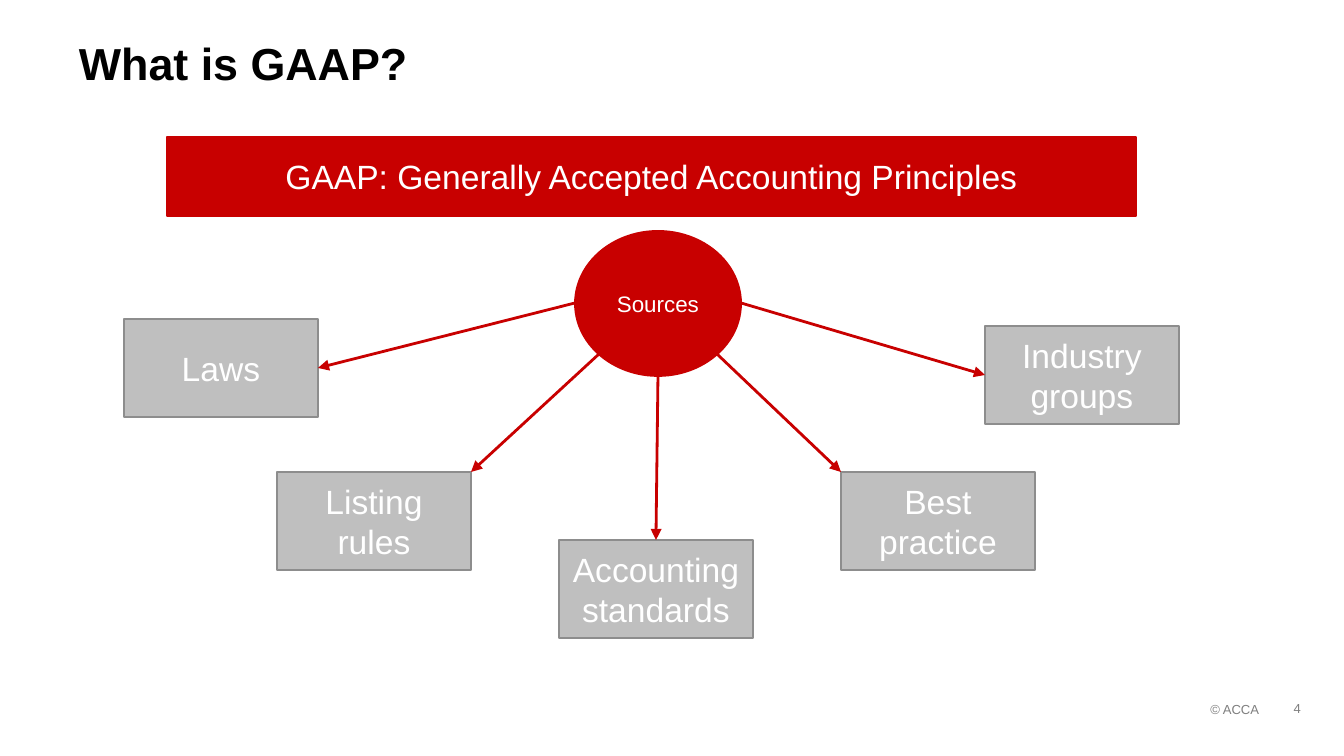
from dataclasses import dataclass
from math import sqrt

from lxml.etree import SubElement
from pptx import Presentation
from pptx.dml.color import RGBColor
from pptx.enum.shapes import MSO_CONNECTOR, MSO_SHAPE
from pptx.enum.text import MSO_ANCHOR, PP_ALIGN
from pptx.oxml.ns import qn
from pptx.shapes.autoshape import Shape
from pptx.slide import Slide
from pptx.text.text import TextFrame
from pptx.util import Pt

EMU_PER_PX = 914400 / 134.4
RED, GREY, GREY_EDGE = "C80000", "BFBFBF", "8D8D8D"
WHITE, BLACK, FOOTER_GREY = "FFFFFF", "000000", "7F7F7F"
SOURCE_WIDTH, SOURCE_HEIGHT = 194, 98
TOP, LEFT, RIGHT = 0, 1, 3


@dataclass
class Box:
    left: int
    top: int
    width: int
    height: int


@dataclass
class Source:
    text: str
    left: int
    top: int
    start: tuple[int, int]
    end: tuple[int, int]
    site: int | None = None


@dataclass
class Label:
    text: str
    box: Box
    size: int
    color: str
    align: PP_ALIGN
    bold: bool = False
    line_spacing: float = 1.0


def px(length: int) -> int:
    return round(length * EMU_PER_PX)


def rgb(color: str) -> RGBColor:
    return RGBColor.from_string(color)


def emu(box: Box) -> tuple[int, ...]:
    return px(box.left), px(box.top), px(box.width), px(box.height)


def write(frame: TextFrame, text: str, size: int, color: str, align: PP_ALIGN,
          bold: bool = False, line_spacing: float = 1.0) -> None:
    frame.word_wrap = True
    paragraph = frame.paragraphs[0]
    paragraph.text = text
    paragraph.alignment = align
    paragraph.line_spacing = line_spacing
    paragraph.font.name = "Arial"
    paragraph.font.size = Pt(size)
    paragraph.font.bold = bold
    paragraph.font.color.rgb = rgb(color)


def add_label(slide: Slide, label: Label) -> None:
    frame = slide.shapes.add_textbox(*emu(label.box)).text_frame
    frame.margin_left = frame.margin_top = 0
    frame.margin_right = frame.margin_bottom = 0
    write(frame, label.text, label.size, label.color, label.align,
          label.bold, label.line_spacing)


def add_block(slide: Slide, kind: MSO_SHAPE, box: Box, text: str, size: int,
              fill: str, edge: str) -> Shape:
    shape = slide.shapes.add_shape(kind, *emu(box))
    shape.shadow.inherit = False
    shape.fill.solid()
    shape.fill.fore_color.rgb = rgb(fill)
    shape.line.color.rgb = rgb(edge)
    shape.line.width = Pt(1)
    shape.text_frame.vertical_anchor = MSO_ANCHOR.MIDDLE
    write(shape.text_frame, text, size, WHITE, PP_ALIGN.CENTER)
    return shape


def add_arrow(slide: Slide, source: Source, target: Shape) -> None:
    points = [px(value) for value in (*source.start, *source.end)]
    arrow = slide.shapes.add_connector(MSO_CONNECTOR.STRAIGHT, *points)
    if source.site is not None:
        arrow.end_connect(target, source.site)
    arrow.line.color.rgb = rgb(RED)
    arrow.line.width = Pt(1.5)
    SubElement(arrow.line._get_or_add_ln(), qn("a:tailEnd"), type="triangle")
    SubElement(arrow._element.spPr, qn("a:effectLst"))


HUB = Box(575, 231, 166, 145)
HUB_X, HUB_Y = HUB.left + HUB.width // 2, HUB.top + HUB.height // 2
DIAGONAL_X = round(HUB.width / 2 / sqrt(2))
DIAGONAL_Y = round(HUB.height / 2 / sqrt(2))
HUB_RIGHT, HUB_BOTTOM = HUB.left + HUB.width, HUB.top + HUB.height
HALF_WIDTH, HALF_HEIGHT = SOURCE_WIDTH // 2, SOURCE_HEIGHT // 2

SOURCES = [
    Source("Laws", 124, 319, (HUB.left, HUB_Y),
           (124 + SOURCE_WIDTH, 319 + HALF_HEIGHT), RIGHT),
    Source("Accounting standards", 559, 540, (HUB_X, HUB_BOTTOM),
           (559 + HALF_WIDTH, 540), TOP),
    Source("Listing rules", 277, 472, (HUB_X - DIAGONAL_X, HUB_Y + DIAGONAL_Y),
           (277 + SOURCE_WIDTH, 472)),
    Source("Best practice", 841, 472, (HUB_X + DIAGONAL_X, HUB_Y + DIAGONAL_Y),
           (841, 472)),
    Source("Industry groups", 985, 326, (HUB_RIGHT, HUB_Y),
           (985, 326 + HALF_HEIGHT), LEFT),
]

LABELS = [
    Label("© ACCA", Box(958, 702, 301, 16), 7, FOOTER_GREY, PP_ALIGN.RIGHT),
    Label("4", Box(1270, 701, 31, 18), 7, FOOTER_GREY, PP_ALIGN.RIGHT),
    Label("What is GAAP?", Box(79, 42, 1153, 52), 24, BLACK, PP_ALIGN.LEFT,
          bold=True, line_spacing=0.9),
]


def main() -> None:
    presentation = Presentation()
    presentation.slide_width, presentation.slide_height = px(1344), px(756)
    slide = presentation.slides.add_slide(presentation.slide_layouts[6])
    for label in LABELS:
        add_label(slide, label)
    add_block(slide, MSO_SHAPE.RECTANGLE, Box(167, 137, 969, 79),
              "GAAP: Generally Accepted Accounting Principles", 18, RED, RED)
    add_block(slide, MSO_SHAPE.OVAL, HUB, "Sources", 12, RED, RED)
    targets = [
        add_block(slide, MSO_SHAPE.RECTANGLE,
                  Box(source.left, source.top, SOURCE_WIDTH, SOURCE_HEIGHT),
                  source.text, 18, GREY, GREY_EDGE)
        for source in SOURCES
    ]
    for source, target in zip(SOURCES, targets):
        add_arrow(slide, source, target)
    presentation.save("out.pptx")


if __name__ == "__main__":
    main()
